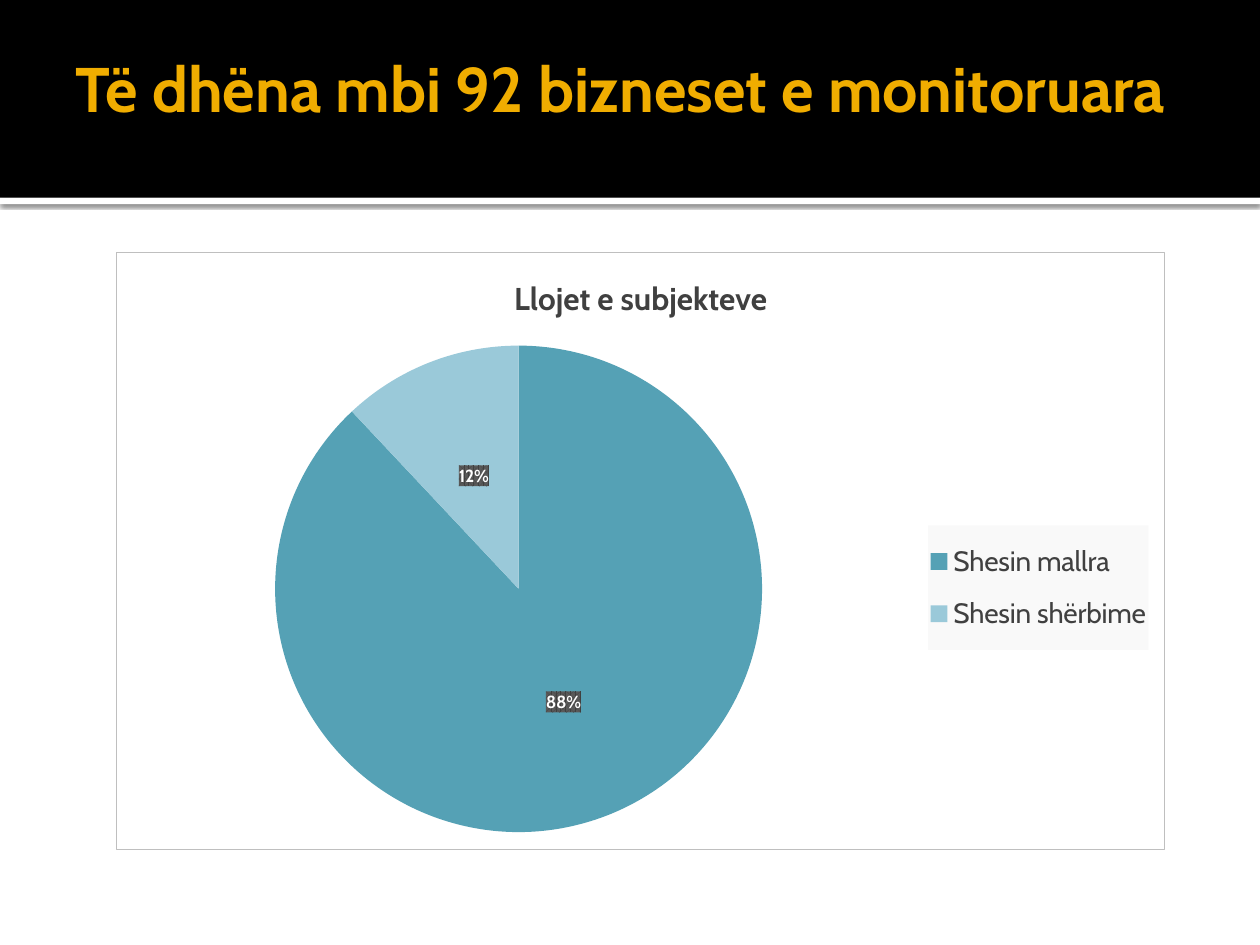
"""Build a slide with a pie chart of the monitored business types."""
from lxml import etree
from pptx import Presentation
from pptx import util as u
from pptx.chart import data
from pptx.dml.color import RGBColor
from pptx.enum import chart as charts, shapes, text
from pptx.oxml import parse_xml
from pptx.oxml.ns import qn

NS = ('xmlns:a="http://schemas.openxmlformats.org/drawingml/2006/main" '
      'xmlns:c="http://schemas.openxmlformats.org/drawingml/2006/chart"')
CHART_WIDTH, CHART_HEIGHT = 8.33, 4.75


def style(font, size, color, bold=False):
    font.name, font.size, font.bold = "Cabin", u.Pt(size), bold
    font.color.rgb = RGBColor.from_string(color)


def place(parent, index, mode, left, top, width, height):
    for old in parent.findall(qn("c:layout")):
        parent.remove(old)
    layout = parse_xml(f"<c:layout {NS}><c:manualLayout/></c:layout>")
    settings = [("xMode", "edge"), ("yMode", "edge"),
                ("x", left / CHART_WIDTH), ("y", top / CHART_HEIGHT),
                ("w", width / CHART_WIDTH), ("h", height / CHART_HEIGHT)]
    for tag, value in mode + settings:
        etree.SubElement(layout[0], qn(f"c:{tag}")).set("val", str(value))
    parent.insert(index, layout)


prs = Presentation()
prs.slide_width, prs.slide_height = u.Inches(10), u.Inches(7.5)
slide = prs.slides.add_slide(prs.slide_layouts[6])

for top, height, color in [(1.57, 0.05, "FFFFFF"), (0, 1.57, "000000")]:
    band = slide.shapes.add_shape(shapes.MSO_SHAPE.RECTANGLE, 0, u.Inches(top),
                                  prs.slide_width, u.Inches(height))
    band.shadow.inherit = False
    band.fill.solid()
    band.fill.fore_color.rgb = RGBColor.from_string(color)
    band.line.fill.background()
    if color == "FFFFFF":
        effects = band._element.spPr.find(qn("a:effectLst"))
        effects.append(parse_xml(
            f'<a:outerShdw {NS} blurRad="31750" dist="10160" dir="5400000" rotWithShape="0">'
            '<a:srgbClr val="000000"><a:alpha val="60000"/></a:srgbClr></a:outerShdw>'))

heading = slide.shapes.add_textbox(u.Inches(0.5), u.Inches(0.17), u.Inches(9), u.Inches(1.04)).text_frame
heading.word_wrap = True
heading.vertical_anchor = text.MSO_ANCHOR.MIDDLE
heading.margin_right = u.Inches(0.05)
heading.text = "Të dhëna mbi 92 bizneset e monitoruara"
heading_run = heading.paragraphs[0].runs[0]
style(heading_run.font, 36, "F0AD00", True)
heading_run._r.get_or_add_rPr().set("kern", "0")

subjects = data.CategoryChartData()
subjects.categories = ["Shesin mallra", "Shesin shërbime"]
subjects.add_series("Series 1", (88, 12))
pie = slide.shapes.add_chart(charts.XL_CHART_TYPE.PIE, u.Inches(0.92), u.Inches(2),
                             u.Inches(CHART_WIDTH), u.Inches(CHART_HEIGHT), subjects).chart
style(pie.font, 10, "000000")
pie.has_title = True
pie.chart_title.include_in_layout = False
caption = pie.chart_title.text_frame
caption.text = "Llojet e subjekteve"
style(caption.paragraphs[0].runs[0].font, 18, "404040", True)

plot = pie.plots[0]
plot.vary_by_categories = True
for index, color in enumerate(["55A1B5", "9AC9D9"]):
    fill = plot.series[0].points[index].format.fill
    fill.solid()
    fill.fore_color.rgb = RGBColor.from_string(color)

plot.has_data_labels = True
shares = plot.data_labels
shares.show_percentage, shares.show_value = True, False
shares.number_format, shares.number_format_is_linked = "0%", False
shares.position = charts.XL_LABEL_POSITION.CENTER
style(shares.font, 10, "FFFFFF", True)
shares._element.find(qn("c:txPr")).addprevious(parse_xml(
    f'<c:spPr {NS}><a:pattFill prst="pct75"><a:fgClr><a:srgbClr val="404040"/></a:fgClr>'
    '<a:bgClr><a:srgbClr val="595959"/></a:bgClr></a:pattFill></c:spPr>'))

pie.has_legend = True
legend = pie.legend
legend.position = charts.XL_LEGEND_POSITION.RIGHT
legend.include_in_layout = False
style(legend.font, 16, "404040")
legend._element.find(qn("c:txPr")).addprevious(parse_xml(
    f'<c:spPr {NS}><a:solidFill><a:srgbClr val="F9F9F9"/></a:solidFill></c:spPr>'))
place(legend._element, 1, [], 6.45, 2.17, 1.75, 0.99)

chart_space = pie._chartSpace
place(chart_space.chart.plotArea, 0, [("layoutTarget", "inner")], 1.26, 0.74, 3.87, 3.87)
chart_space.find(qn("c:txPr")).addprevious(parse_xml(
    f'<c:spPr {NS}><a:solidFill><a:srgbClr val="FFFFFF"/></a:solidFill>'
    '<a:ln w="9525"><a:solidFill><a:srgbClr val="BFBFBF"/></a:solidFill></a:ln></c:spPr>'))

prs.save("out.pptx")
